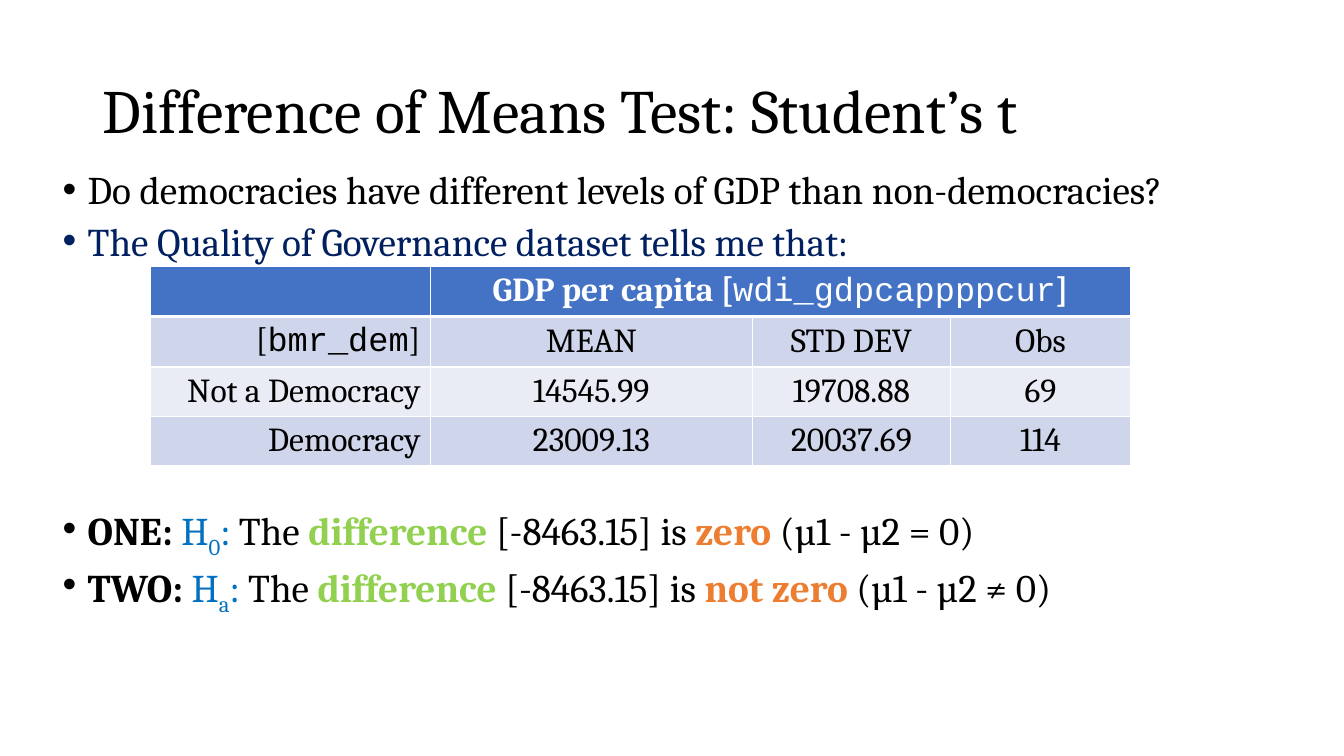
from lxml import etree
from pptx import Presentation
from pptx.dml.color import RGBColor
from pptx.enum import text as t
from pptx.oxml import ns
from pptx.util import Inches, Pt

BLACK, WHITE, NAVY, BLUE = "000000", "FFFFFF", "002060", "0070C0"
GREEN, ORANGE = "92D050", "ED7D31"
HEADER, BAND_DARK, BAND_LIGHT = "4472C4", "CFD5EA", "E9EBF5"


def paint(fill, color):
    fill.solid()
    fill.fore_color.rgb = RGBColor.from_string(color)


def write(paragraph, words, size=28, color=BLACK, bold=False, font="Cambria", baseline=0):
    """Add one formatted run; baseline is a percentage, negative for a subscript."""
    run = paragraph.add_run()
    run.text = words
    run.font.size, run.font.name, run.font.bold = Pt(size), font, bold
    paint(run.font.fill, color)
    if baseline:
        run.font._element.set("baseline", str(baseline * 1000))


prs = Presentation()
prs.slide_width, prs.slide_height = Inches(13.33), Inches(7.5)
slide = prs.slides.add_slide(prs.slide_layouts[1])
title, body = slide.placeholders

# Title
title.left, title.top, title.width, title.height = map(Inches, (0.92, 0.4, 11.5, 1.45))
title.text_frame.vertical_anchor = t.MSO_ANCHOR.MIDDLE
heading = title.text_frame.paragraphs[0]
heading.alignment = t.PP_ALIGN.LEFT
heading.line_spacing = 0.9
write(heading, "Difference of Means Test: Student’s t", size=44)

# Question and hypotheses
body.left, body.top, body.width, body.height = map(Inches, (0.52, 1.68, 12.41, 5.42))
body.text_frame.auto_size = t.MSO_AUTO_SIZE.NONE
body.text_frame.vertical_anchor = t.MSO_ANCHOR.TOP
question, source, null_hypothesis, alternative = bullets = [
    body.text_frame.paragraphs[0], *(body.text_frame.add_paragraph() for _ in range(3))]
for bullet in bullets:
    bullet.alignment = t.PP_ALIGN.LEFT
    bullet.line_spacing = 0.8
    bullet.space_before = Pt(10)
    properties = bullet._p.get_or_add_pPr()
    properties.set("marL", str(Inches(0.25)))
    properties.set("indent", str(-Inches(0.25)))
null_hypothesis.space_before = Pt(177)  # room for the table

write(question, "Do democracies have different levels of GDP than non-democracies?")
write(source, "The Quality of Governance dataset tells me that:", color=NAVY)
for hypothesis, label, index, claim, formula in (
    (null_hypothesis, "ONE: ", "0", "zero ", "(µ1 - µ2 = 0)"),
    (alternative, "TWO: ", "a", "not zero ", "(µ1 - µ2 ≠ 0)"),
):
    write(hypothesis, label, bold=True)
    write(hypothesis, "H", color=BLUE)
    write(hypothesis, index, color=BLUE, baseline=-25)
    write(hypothesis, ": ", color=BLUE)
    write(hypothesis, "The ")
    write(hypothesis, "difference ", color=GREEN, bold=True)
    write(hypothesis, "[-8463.15] is ")
    write(hypothesis, claim, color=ORANGE, bold=True)
    write(hypothesis, formula)

# GDP table
rows = (
    ("", "GDP per capita [wdi_gdpcappppcur]", "", ""),
    ("[bmr_dem]", "MEAN", "STD DEV", "Obs"),
    ("Not a Democracy", "14545.99", "19708.88", "69"),
    ("Democracy", "23009.13", "20037.69", "114"),
)
row_fills = (HEADER, BAND_DARK, BAND_LIGHT, BAND_DARK)
column_widths = (2.78, 3.19, 1.97, 1.78)
row_height = 0.49
gdp = slide.shapes.add_table(
    len(rows), len(column_widths), Inches(1.49), Inches(2.64),
    Inches(sum(column_widths)), Inches(row_height * len(rows))).table
for column, width in zip(gdp.columns, column_widths):
    column.width = Inches(width)
gdp.cell(0, 1).merge(gdp.cell(0, 3))

for r, (row, row_fill) in enumerate(zip(rows, row_fills)):
    gdp.rows[r].height = Inches(row_height)
    for c, words in enumerate(row):
        cell = gdp.cell(r, c)
        for side in ("lnL", "lnR", "lnT", "lnB"):
            under_header = (r, side) in ((0, "lnB"), (1, "lnT"))
            border = etree.SubElement(cell._tc.get_or_add_tcPr(), ns.qn(f"a:{side}"),
                                      w=str(Pt(3 if under_header else 1)))
            line_fill = etree.SubElement(border, ns.qn("a:solidFill"))
            etree.SubElement(line_fill, ns.qn("a:srgbClr"), val=WHITE)
        paint(cell.fill, row_fill)
        if r < 2 and c > 0:
            cell.vertical_anchor = t.MSO_ANCHOR.MIDDLE
        if not words:
            continue
        entry = cell.text_frame.paragraphs[0]
        entry.alignment = t.PP_ALIGN.CENTER if c else t.PP_ALIGN.RIGHT
        color = BLACK if r else WHITE
        before, bracket, variable = words.partition("[")
        write(entry, before + bracket, size=24, color=color, bold=r == 0)
        if variable:
            write(entry, variable.rstrip("]"), size=24, color=color, font="Courier New")
            write(entry, "]", size=24, color=color, bold=r == 0)

prs.save("out.pptx")
